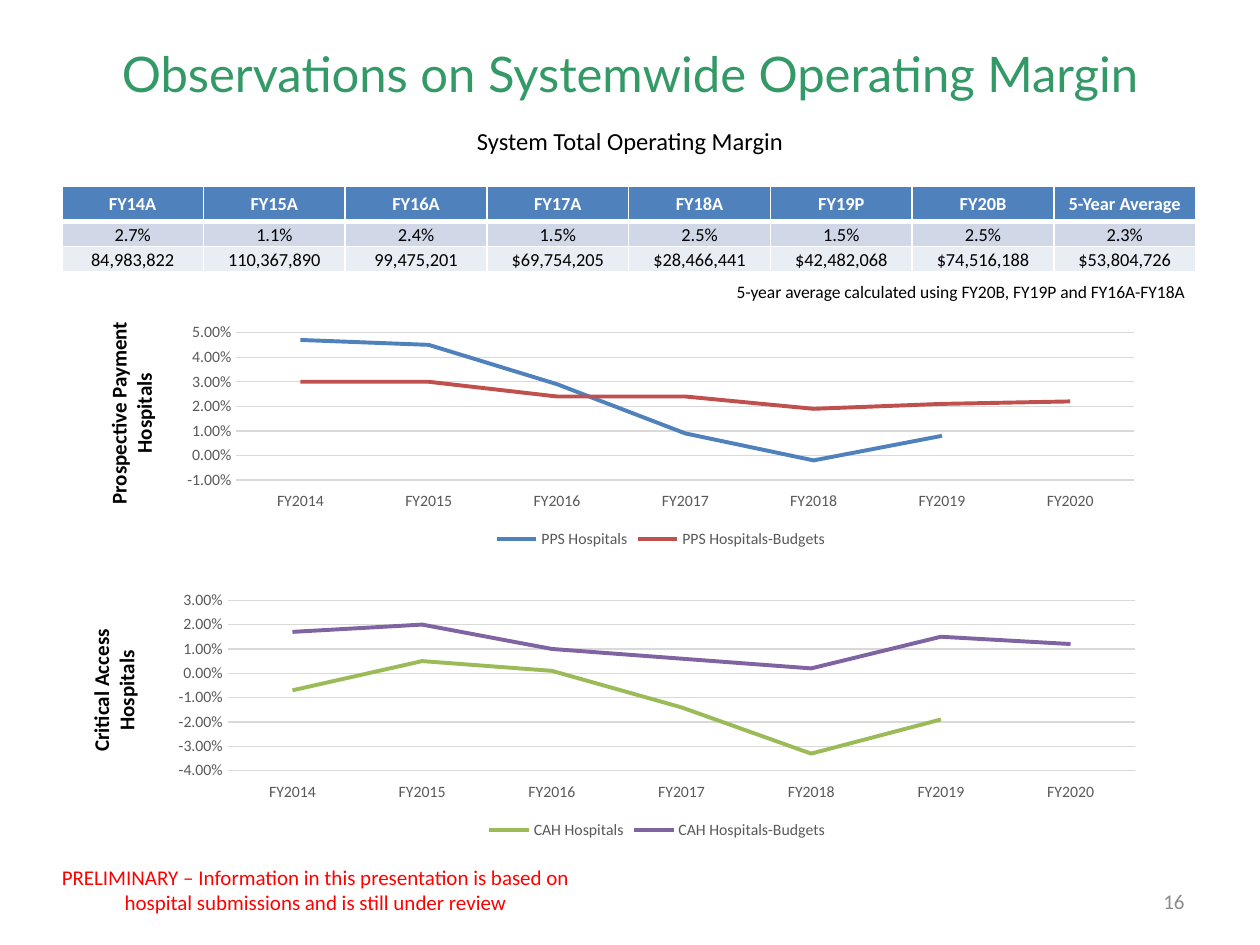
import pptx
import pptx.util
import pptx.chart.data
import pptx.dml.color
import pptx.enum.chart
import pptx.enum.text
import pptx.oxml.ns
from lxml import etree

Inches, Pt = pptx.util.Inches, pptx.util.Pt
ALIGN = pptx.enum.text.PP_ALIGN
ANCHOR = pptx.enum.text.MSO_ANCHOR
COLORS = {
    "title": "339966", "text": "000000", "warning": "FF0000", "number": "8C8C8C",
    "white": "FFFFFF", "header": "4F81BD", "band": "D0D8E8", "light": "E9EDF4",
    "grid": "D9D9D9", "axis": "595959", "blue": "4F81BD", "red": "C0504D",
    "green": "9BBB59", "purple": "8064A2",
}


def style_font(font, size, color, name="Calibri", bold=False):
    font.size = Pt(size)
    font.name = name
    font.bold = bold
    font.color.rgb = pptx.dml.color.RGBColor.from_string(COLORS[color])


def write(frame, lines, size, color, align, name="Calibri", bold=False):
    frame.word_wrap = True
    for index, line in enumerate(lines):
        para = frame.paragraphs[0] if index == 0 else frame.add_paragraph()
        para.alignment = align
        span = para.add_run()
        span.text = line
        style_font(span.font, size, color, name, bold)


deck = pptx.Presentation()
deck.slide_width, deck.slide_height = Inches(10), Inches(7.5)
page = deck.slides.add_slide(deck.slide_layouts[1])
left, width = Inches(0.5), Inches(9)

title = page.shapes.title
title.left, title.top, title.width, title.height = left, Inches(0.3), width, Inches(0.55)
title.text_frame.vertical_anchor = ANCHOR.MIDDLE
title.text_frame.auto_size = pptx.enum.text.MSO_AUTO_SIZE.NONE
write(title.text_frame, ["Observations on Systemwide Operating Margin"], 28, "title", ALIGN.CENTER, "Lato")

body = page.placeholders[1]
body.left, body.top, body.width, body.height = left, Inches(0.95), width, Inches(5.62)
body.text_frame.auto_size = pptx.enum.text.MSO_AUTO_SIZE.NONE
subtitle = body.text_frame.paragraphs[0]
properties = subtitle._p.get_or_add_pPr()
properties.set("marL", "0")
properties.set("indent", "0")
etree.SubElement(properties, pptx.oxml.ns.qn("a:buNone"))
subtitle.space_before = Pt(0)
write(body.text_frame, ["System Total Operating Margin"], 14, "text", ALIGN.CENTER)

years = ["FY2014", "FY2015", "FY2016", "FY2017", "FY2018", "FY2019", "FY2020"]
charts = [
    ((1.33, 2.53, 7.83, 1.86), (-0.01, 0.05), [
        ("PPS Hospitals", "blue", [0.047, 0.045, 0.029, 0.009, -0.002, 0.008, None]),
        ("PPS Hospitals-Budgets", "red", [0.03, 0.03, 0.024, 0.024, 0.019, 0.021, 0.022]),
    ]),
    ((1.26, 4.65, 7.91, 2.05), (-0.04, 0.03), [
        ("CAH Hospitals", "green", [-0.007, 0.005, 0.001, -0.014, -0.033, -0.019, None]),
        ("CAH Hospitals-Budgets", "purple", [0.017, 0.02, 0.01, 0.006, 0.002, 0.015, 0.012]),
    ]),
]
for place, (low, high), series_rows in charts:
    data = pptx.chart.data.CategoryChartData(number_format="0.00%")
    data.categories = years
    for name, color, values in series_rows:
        data.add_series(name, values)
    chart = page.shapes.add_chart(
        pptx.enum.chart.XL_CHART_TYPE.LINE, *map(Inches, place), data).chart
    style_font(chart.font, 10, "text")
    chart.has_title = False
    chart.has_legend = True
    chart.legend.position = pptx.enum.chart.XL_LEGEND_POSITION.BOTTOM
    chart.legend.include_in_layout = False
    style_font(chart.legend.font, 9, "axis")
    for axis in (chart.category_axis, chart.value_axis):
        axis.major_tick_mark = pptx.enum.chart.XL_TICK_MARK.NONE
        axis.minor_tick_mark = pptx.enum.chart.XL_TICK_MARK.NONE
        style_font(axis.tick_labels.font, 9, "axis")
    chart.category_axis.tick_label_position = pptx.enum.chart.XL_TICK_LABEL_POSITION.LOW
    chart.value_axis.minimum_scale, chart.value_axis.maximum_scale = low, high
    chart.value_axis.major_unit = 0.01
    chart.value_axis.tick_labels.number_format = "0.00%"
    chart.value_axis.tick_labels.number_format_is_linked = False
    chart.value_axis.format.line.fill.background()
    for line in (chart.category_axis.format.line, chart.value_axis.major_gridlines.format.line):
        line.width = Pt(0.75)
        line.color.rgb = pptx.dml.color.RGBColor.from_string(COLORS["grid"])
    chart.plots[0].vary_by_categories = False
    for series, (name, color, values) in zip(chart.plots[0].series, series_rows):
        series.smooth = False
        series.marker.style = pptx.enum.chart.XL_MARKER_STYLE.NONE
        series.format.line.width = Pt(2.25)
        series.format.line.color.rgb = pptx.dml.color.RGBColor.from_string(COLORS[color])

margins = [
    ["FY14A", "FY15A", "FY16A", "FY17A", "FY18A", "FY19P", "FY20B", "5-Year Average"],
    ["2.7%", "1.1%", "2.4%", "1.5%", "2.5%", "1.5%", "2.5%", "2.3%"],
    ["84,983,822", "110,367,890", "99,475,201", "$69,754,205", "$28,466,441",
     "$42,482,068", "$74,516,188", "$53,804,726"],
]
row_heights = [0.27, 0.2, 0.2]
row_fills = ["header", "band", "light"]
table = page.shapes.add_table(
    len(margins), len(margins[0]), Inches(0.49), Inches(1.48), width, Inches(sum(row_heights))).table
for column in table.columns:
    column.width = width // len(margins[0])
for r, values in enumerate(margins):
    table.rows[r].height = Inches(row_heights[r])
    header = r == 0
    for c, value in enumerate(values):
        cell = table.cell(r, c)
        cell.vertical_anchor = ANCHOR.TOP if header else ANCHOR.BOTTOM
        if not header:
            cell.margin_left = cell.margin_right = cell.margin_top = Inches(0.01)
            cell.margin_bottom = 0
        for side in ("L", "R", "T", "B"):
            thick = (header and side == "B") or (r == 1 and side == "T")
            border = etree.SubElement(
                cell._tc.get_or_add_tcPr(), pptx.oxml.ns.qn(f"a:ln{side}"), w=str(Pt(3 if thick else 1)))
            paint = etree.SubElement(border, pptx.oxml.ns.qn("a:solidFill"))
            etree.SubElement(paint, pptx.oxml.ns.qn("a:srgbClr"), val=COLORS["white"])
        cell.fill.solid()
        cell.fill.fore_color.rgb = pptx.dml.color.RGBColor.from_string(COLORS[row_fills[r]])
        write(cell.text_frame, [value], 10.5, "white" if header else "text", ALIGN.CENTER, bold=header)

side_labels = [
    ((0.65, 4.55, 0.61, 1.86), ["Critical Access", "Hospitals"]),
    ((0.79, 2.13, 0.61, 2.3), ["Prospective Payment", "Hospitals"]),
]
for place, lines in side_labels:
    box = page.shapes.add_textbox(*map(Inches, place))
    box.text_frame._txBody.bodyPr.set("vert", "vert270")
    write(box.text_frame, lines, 12, "text", ALIGN.CENTER, bold=True)

notices = [
    ((0.5, 2.18, 9, 0.27), "5-year average calculated using FY20B, FY19P and FY16A-FY18A",
     10, "text", ALIGN.RIGHT, ANCHOR.TOP),
    ((0.17, 6.81, 4.67, 0.5),
     "PRELIMINARY – Information in this presentation is based on hospital submissions and is still under review",
     12, "warning", ALIGN.CENTER, ANCHOR.TOP),
    ((7.17, 6.95, 2.33, 0.4), "16", 12, "number", ALIGN.RIGHT, ANCHOR.MIDDLE),
]
for place, text, size, color, align, anchor in notices:
    box = page.shapes.add_textbox(*map(Inches, place))
    box.text_frame.vertical_anchor = anchor
    write(box.text_frame, [text], size, color, align)

deck.save("out.pptx")
